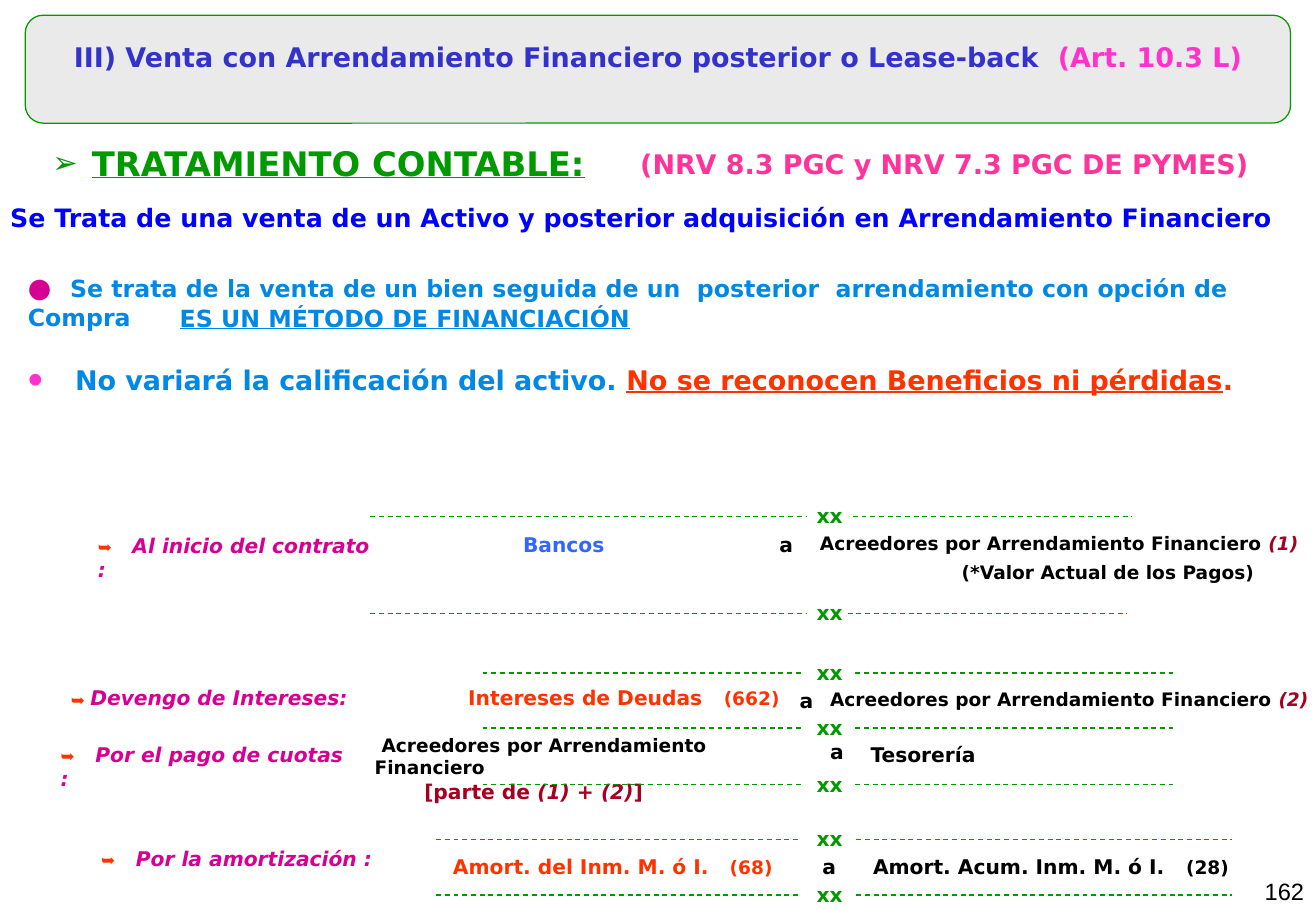
from lxml import etree
from pptx import Presentation
from pptx.dml.color import RGBColor
from pptx.enum.dml import MSO_LINE
from pptx.enum.shapes import MSO_CONNECTOR, MSO_SHAPE
from pptx.enum.text import MSO_ANCHOR, MSO_AUTO_SIZE, PP_ALIGN
from pptx.oxml.ns import qn
from pptx.util import Pt

STRAIGHT = MSO_CONNECTOR.STRAIGHT
DASH = MSO_LINE.DASH
ROUNDED = MSO_SHAPE.ROUNDED_RECTANGLE
TOP = MSO_ANCHOR.TOP
NO_FIT = MSO_AUTO_SIZE.NONE
LEFT, CENTER, RIGHT = PP_ALIGN.LEFT, PP_ALIGN.CENTER, PP_ALIGN.RIGHT

BLACK = RGBColor(0x00, 0x00, 0x00)
GREEN = RGBColor(0x00, 0x99, 0x00)
BLUE = RGBColor(0x00, 0x00, 0xFF)
INDIGO = RGBColor(0x33, 0x33, 0xCC)
SKY = RGBColor(0x00, 0x88, 0xE4)
BANK_BLUE = RGBColor(0x33, 0x66, 0xFF)
PINK = RGBColor(0xFF, 0x33, 0xCC)
ROSE = RGBColor(0xFF, 0x33, 0x99)
MAGENTA = RGBColor(0xD6, 0x00, 0x93)
RED = RGBColor(0xFF, 0x33, 0x00)
WINE = RGBColor(0xA5, 0x00, 0x21)
GRAY = RGBColor(0xEA, 0xEA, 0xEA)

FONT = "DejaVu Sans"
NUMBER_FONT = "Arial"

TITLE = [
    ("III) Venta con Arrendamiento Financiero posterior o Lease-back  ", 16, INDIGO, "b"),
    ("(Art. 10.3 L)", 16, PINK, "b"),
]
HEADING = [("TRATAMIENTO CONTABLE:", 20, GREEN, "bu")]
SALE = [
    ("●  ", 16, MAGENTA, "b"),
    ("Se trata de la venta de un bien seguida de un  posterior  arrendamiento "
     "con opción de Compra", 14, SKY, "b"),
]
NO_PROFIT = [
    ("No variará la calificación del activo. ", 16, SKY, "b"),
    ("No se reconocen Beneficios ni pérdidas", 16, RED, "bu"),
    (".", 16, RED, "b"),
]
CREDITORS = "Acreedores por Arrendamiento Financiero"

TEXTS = [
    (379.5, 87.5, 390, [("(NRV 8.3 PGC y NRV 7.3 PGC DE PYMES)", 16, ROSE, "b")]),
    (6, 120, 765, [("Se Trata de una venta de un Activo y posterior adquisición en "
                    "Arrendamiento Financiero", 15, BLUE, "b")]),
    (106.5, 180, 300, [("ES UN MÉTODO DE FINANCIACIÓN", 14, SKY, "bu")]),
    (310, 315.5, 60, [("Bancos", 12, BANK_BLUE, "b")]),
    (486, 315.5, 290, [(CREDITORS + " ", 11, BLACK, "b"), ("(1)", 11, WINE, "bi")]),
    (570, 332.5, 190, [("(*Valor Actual de los Pagos)", 11, BLACK, "b")]),
    (277.5, 406.5, 145, [("Intereses de Deudas", 12, RED, "b")]),
    (429, 407.5, 40, [("(662)", 11, RED, "b")]),
    (492, 408, 287, [(CREDITORS + " ", 11, BLACK, "b"), ("(2)", 11, WINE, "bi")]),
    (222, 434, 250, [(" ", 12, BLACK, "b"), (CREDITORS, 11, BLACK, "b")]),
    (251.5, 462, 150, [("[parte de ", 12, WINE, "b"), ("(1)", 12, WINE, "bi"),
                       (" + ", 12, WINE, "b"), ("(2)", 12, WINE, "bi"),
                       ("]", 12, WINE, "b")]),
    (516, 440, 80, [("Tesorería", 12, BLACK, "b")]),
    (268.5, 506.5, 160, [("Amort. del Inm. M. ó I.", 12, RED, "b")]),
    (432.5, 507.5, 40, [("(68)", 11, RED, "b")]),
    (517.5, 506.5, 180, [("Amort. Acum. Inm. M. ó I.", 12, BLACK, "b")]),
    (703, 507.5, 40, [("(28)", 11, BLACK, "b")]),
]
LABELS = [
    (58, 316, 165, "Al inicio del contrato :", 20.5),
    (42, 406.5, 190, "Devengo de Intereses:", 11.5),
    (36, 440, 170, "Por el pago de cuotas :", 20.5),
    (60, 501.5, 190, "Por la amortización :", 20.5),
]
TO_MARKS = [(462, 315.5), (474, 408), (492, 438), (487.5, 506.5)]
RULES = [
    (306, (219.5, 477.5), (505.5, 671)),
    (363.5, (219.5, 477.5), (502.5, 668)),
    (399, (286, 474.5), (507, 695.5)),
    (431.5, (286, 474.5), (507, 695.5)),
    (465, (286, 474.5), (507, 695.5)),
    (497.5, (258.5, 474.5), (507.5, 730)),
    (530.5, (258.5, 474.5), (507.5, 730)),
]


def add_runs(paragraph, runs, font=FONT):
    for text, size, color, style in runs:
        run = paragraph.add_run()
        run.text = text
        run.font.name = font
        run.font.size = Pt(size)
        run.font.color.rgb = color
        run.font.bold = "b" in style
        run.font.italic = "i" in style
        run.font.underline = "u" in style


def set_indent(paragraph, margin, first_line):
    properties = paragraph._p.get_or_add_pPr()
    properties.set("marL", str(Pt(margin)))
    properties.set("indent", str(Pt(first_line)))
    return properties


def set_plain(paragraph, first_line=0):
    etree.SubElement(set_indent(paragraph, 0, first_line), qn("a:buNone"))


def set_bullet(paragraph, bullet, font, color, percent, hanging):
    properties = set_indent(paragraph, hanging, -hanging)
    bullet_color = etree.SubElement(properties, qn("a:buClr"))
    etree.SubElement(bullet_color, qn("a:srgbClr"), val=str(color))
    etree.SubElement(properties, qn("a:buSzPct"), val=str(percent * 1000))
    etree.SubElement(properties, qn("a:buFont"), typeface=font)
    etree.SubElement(properties, qn("a:buChar"), char=bullet)


def prepare_frame(shape):
    frame = shape.text_frame
    frame.word_wrap = True
    frame.auto_size = NO_FIT
    frame.vertical_anchor = TOP
    frame.margin_left = frame.margin_right = frame.margin_top = frame.margin_bottom = 0
    return frame


def place(shape, left, top, width, height):
    shape.left, shape.top, shape.width, shape.height = map(Pt, (left, top, width, height))


def add_text(slide, left, top, width, runs, font=FONT, align=LEFT):
    height = round(max(run[1] for run in runs) * 1.2, 1)
    box = slide.shapes.add_textbox(Pt(left), Pt(top), Pt(width), Pt(height))
    paragraph = prepare_frame(box).paragraphs[0]
    paragraph.alignment = align
    add_runs(paragraph, runs, font)
    return paragraph


def add_dashes(slide, start, end, y):
    line = slide.shapes.add_connector(STRAIGHT, Pt(start), Pt(y), Pt(end), Pt(y))
    line.line.color.rgb = GREEN
    line.line.width = Pt(0.75)
    line.line.dash_style = DASH
    etree.SubElement(line.element.spPr, qn("a:effectLst"))


def add_title(slide):
    panel = slide.shapes.add_shape(ROUNDED, Pt(15), Pt(9), Pt(750), Pt(64))
    panel.shadow.inherit = False
    panel.fill.solid()
    panel.fill.fore_color.rgb = GRAY
    panel.line.color.rgb = GREEN
    panel.line.width = Pt(0.75)
    title = slide.shapes.title
    title.element.addprevious(panel.element)
    place(title, 12, 24, 756, 20)
    paragraph = prepare_frame(title).paragraphs[0]
    paragraph.alignment = CENTER
    add_runs(paragraph, TITLE)


def add_body(slide):
    body = slide.placeholders[1]
    place(body, 16.5, 160.5, 757, 80)
    frame = prepare_frame(body)
    sale, no_profit = frame.paragraphs[0], frame.add_paragraph()
    sale.space_before = Pt(0)
    set_plain(sale)
    add_runs(sale, SALE)
    no_profit.space_before = Pt(19)
    set_bullet(no_profit, "•", NUMBER_FONT, PINK, 160, 28)
    add_runs(no_profit, NO_PROFIT)


def main():
    presentation = Presentation()
    presentation.slide_width, presentation.slide_height = Pt(780), Pt(540)
    slide = presentation.slides.add_slide(presentation.slide_layouts[1])
    add_title(slide)
    add_body(slide)
    heading = add_text(slide, 31, 84.5, 330, HEADING)
    set_bullet(heading, "➢", FONT, GREEN, 90, 23.5)
    for left, top, width, runs in TEXTS:
        add_text(slide, left, top, width, runs)
    for left, top, width, label, first_line in LABELS:
        add_text(slide, left, top + 2, 12, [("➥", 10, RED, "b")])
        paragraph = add_text(slide, left, top, width, [(label, 12, MAGENTA, "bi")])
        set_plain(paragraph, first_line)
    for left, top in TO_MARKS:
        add_text(slide, left, top, 12, [("a", 12, BLACK, "b")])
    for y, *spans in RULES:
        add_text(slide, 484, y - 7.5, 20, [("xx", 12, GREEN, "b")])
        for start, end in spans:
            add_dashes(slide, start, end, y)
    add_text(slide, 700, 520, 73, [("162", 14, BLACK, "")], NUMBER_FONT, RIGHT)
    presentation.save("out.pptx")


if __name__ == "__main__":
    main()
